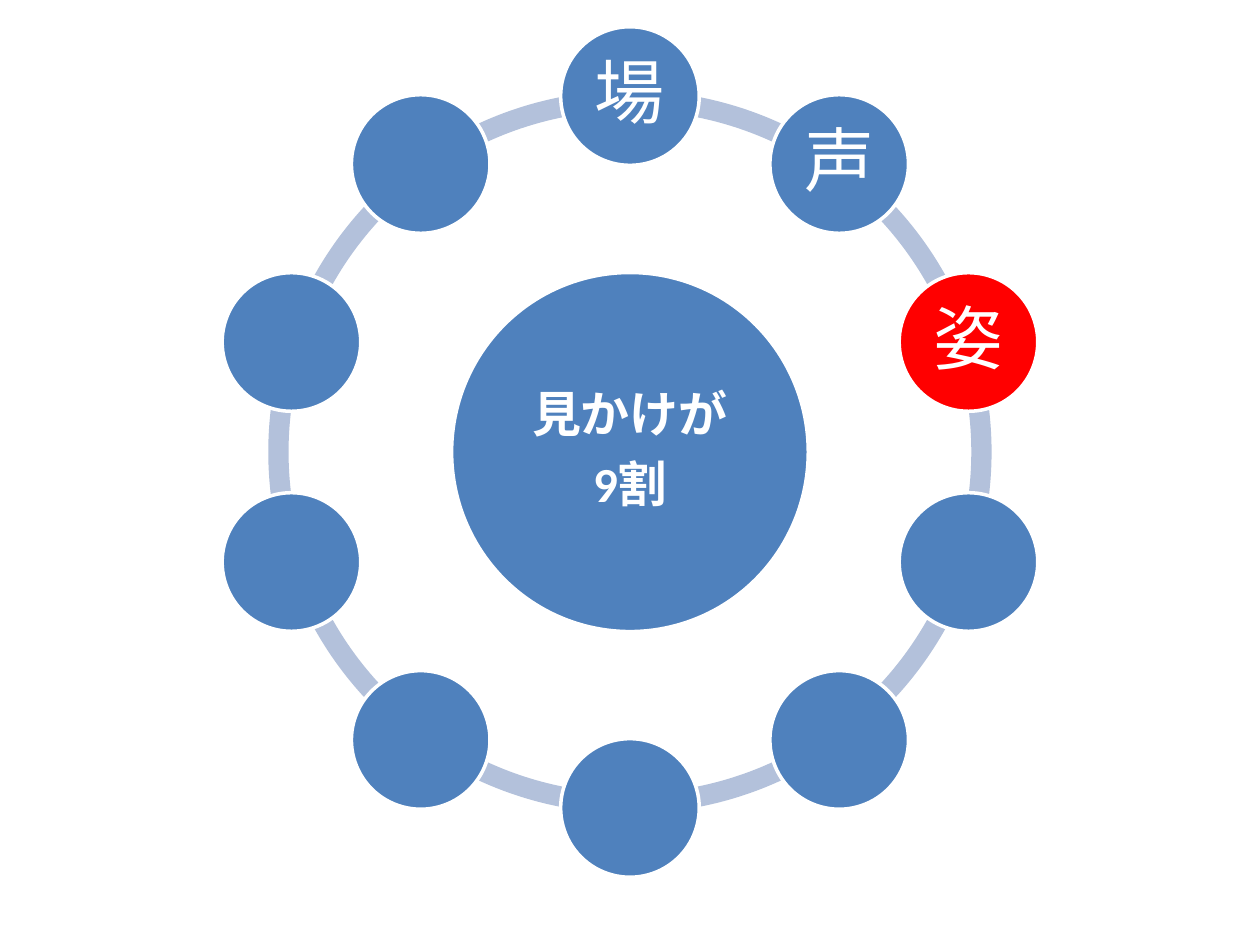
from dataclasses import dataclass
from math import cos, radians, sin

from lxml.etree import SubElement
from pptx import Presentation
from pptx.dml.color import RGBColor
from pptx.enum.shapes import MSO_SHAPE as Preset
from pptx.enum.text import MSO_ANCHOR as Anchor, PP_ALIGN as Align
from pptx.oxml.ns import qn
from pptx.shapes.autoshape import Shape
from pptx.shapes.shapetree import GroupShapes
from pptx.util import Pt


@dataclass(frozen=True)
class Theme:
    blue: RGBColor = RGBColor(0x4F, 0x81, 0xBD)
    ring: RGBColor = RGBColor(0xB3, 0xC1, 0xDB)
    red: RGBColor = RGBColor(0xFF, 0x00, 0x00)
    white: RGBColor = RGBColor(0xFF, 0xFF, 0xFF)
    font: str = "Calibri"
    hub_size: float = 28
    node_size: float = 40
    outline: float = 2


@dataclass(frozen=True)
class Node:
    text: str = ""
    color: RGBColor = Theme.blue


THEME = Theme()
CENTER_X, CENTER_Y = 360, 258.3
ORBIT_RADIUS = 203.4
RING_DIAMETER = 413.3
RING_THICKNESS = 0.028
HUB_WIDTH, HUB_HEIGHT = 203.8, 205.2
NODE_DIAMETER = 79.2
TOP_ANGLE = 270
ADJUSTMENT_PER_DEGREE = 0.6  # angles are stored in 60000ths, adjustments in 100000ths

# Clockwise from the top
NODES = [Node("場"), Node("声"), Node("姿", THEME.red)] + [Node()] * 7
STEP = 360 / len(NODES)


def add_centered(shapes: GroupShapes, preset: Preset, x: float, y: float,
                 width: float, height: float, color: RGBColor) -> Shape:
    shape = shapes.add_shape(preset, Pt(x - width / 2), Pt(y - height / 2),
                             Pt(width), Pt(height))
    shape.shadow.inherit = False
    shape.fill.solid()
    shape.fill.fore_color.rgb = color
    shape.line.fill.background()
    return shape


def add_ring_segment(shapes: GroupShapes, start: float) -> None:
    segment = add_centered(shapes, Preset.BLOCK_ARC, CENTER_X, CENTER_Y,
                           RING_DIAMETER, RING_DIAMETER, THEME.ring)
    segment.adjustments[0] = start % 360 * ADJUSTMENT_PER_DEGREE
    segment.adjustments[1] = (start + STEP) % 360 * ADJUSTMENT_PER_DEGREE
    segment.adjustments[2] = RING_THICKNESS


def add_circle(shapes: GroupShapes, x: float, y: float, width: float,
               height: float, color: RGBColor) -> Shape:
    circle = add_centered(shapes, Preset.OVAL, x, y, width, height, color)
    circle.line.color.rgb = THEME.white
    circle.line.width = Pt(THEME.outline)
    return circle


def write_text(shape: Shape, text: str, *, size: float, inset: float,
               bold: bool = False) -> None:
    frame = shape.text_frame
    frame.word_wrap = True
    frame.vertical_anchor = Anchor.MIDDLE
    frame.margin_left = frame.margin_right = Pt(inset)
    frame.margin_top = frame.margin_bottom = Pt(inset)
    frame.text = text
    for paragraph in frame.paragraphs:
        paragraph.alignment = Align.CENTER
        paragraph.line_spacing = 0.9
        space_after = SubElement(paragraph._p.get_or_add_pPr(), qn("a:spcAft"))
        SubElement(space_after, qn("a:spcPct"), val="35000")
        for run in paragraph.runs:
            run.font.name = THEME.font
            run.font.size = Pt(size)
            run.font.bold = bold
            run.font.color.rgb = THEME.white


def main() -> None:
    presentation = Presentation()
    presentation.slide_width, presentation.slide_height = Pt(720), Pt(540)
    slide = presentation.slides.add_slide(presentation.slide_layouts[6])
    shapes = slide.shapes.add_group_shape().shapes

    angles = [TOP_ANGLE + STEP * index for index in range(len(NODES))]
    for angle in reversed(angles):
        add_ring_segment(shapes, angle)

    hub = add_circle(shapes, CENTER_X, CENTER_Y, HUB_WIDTH, HUB_HEIGHT, THEME.blue)
    write_text(hub, "見かけが\n9割", size=THEME.hub_size, inset=2.8, bold=True)

    for node, angle in zip(NODES, angles):
        circle = add_circle(shapes,
                            CENTER_X + ORBIT_RADIUS * cos(radians(angle)),
                            CENTER_Y + ORBIT_RADIUS * sin(radians(angle)),
                            NODE_DIAMETER, NODE_DIAMETER, node.color)
        if node.text:
            write_text(circle, node.text, size=THEME.node_size, inset=4)

    presentation.save("out.pptx")


if __name__ == "__main__":
    main()
